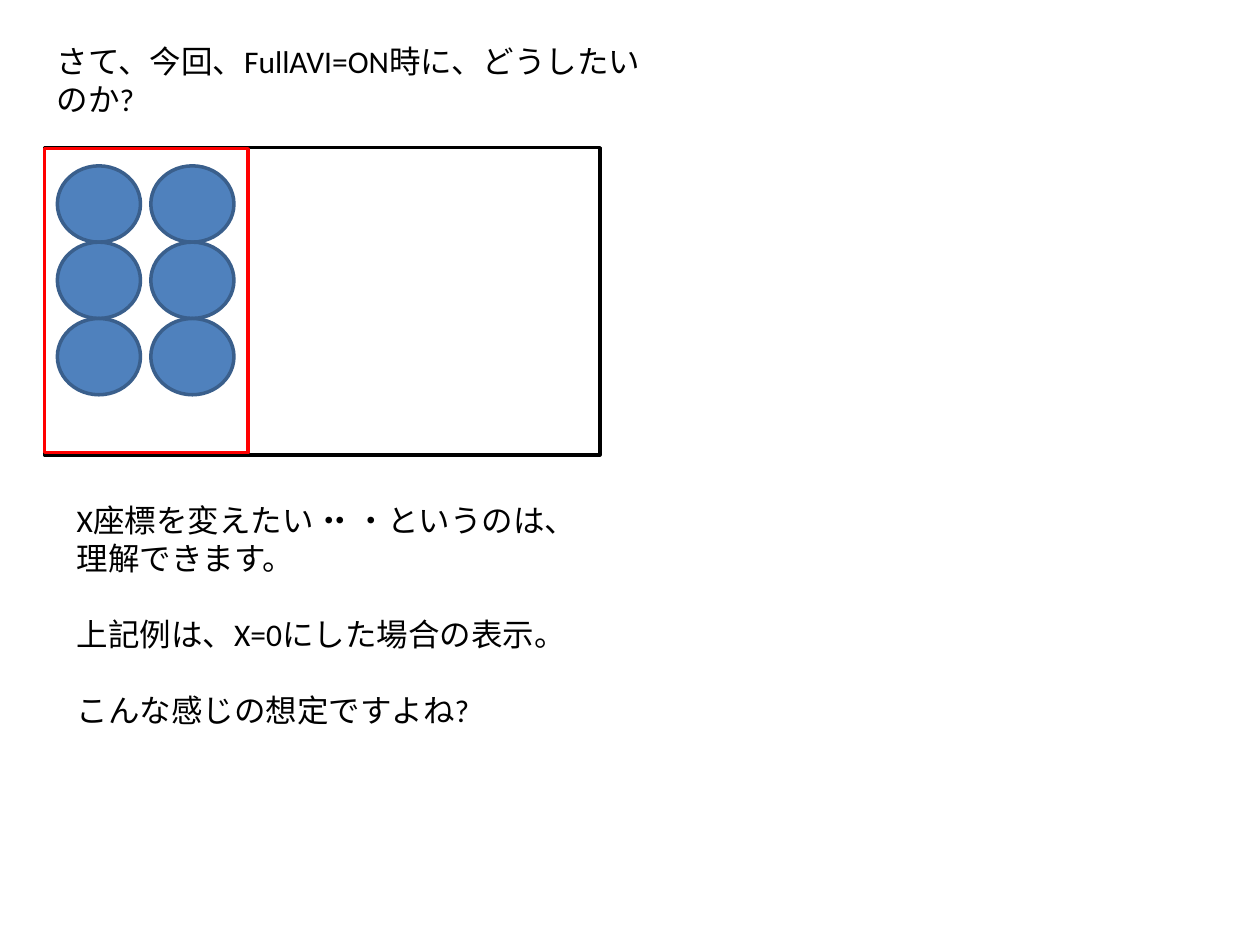
"""Build a slide about the display layout wanted when FullAVI is on."""
import dataclasses

import pptx
import pptx.dml.color
import pptx.enum.shapes
import pptx.enum.text
import pptx.util

Pt = pptx.util.Pt
MSO_SHAPE = pptx.enum.shapes.MSO_SHAPE
COLORS = {"text": "000000", "frame": "000000", "window": "FF0000",
          "disc": "4F81BD", "disc_edge": "3A5F8C"}


@dataclasses.dataclass(frozen=True)
class Box:
    left: float
    top: float
    width: float
    height: float


@dataclasses.dataclass(frozen=True)
class Span:
    text: str
    spacing: float = 0


@dataclasses.dataclass(frozen=True)
class Line:
    spans: tuple[Span, ...]
    gap: float = 0


def rgb(name: str) -> pptx.dml.color.RGBColor:
    return pptx.dml.color.RGBColor.from_string(COLORS[name])


def place(sp, box: Box) -> None:
    sp.left, sp.top = Pt(box.left), Pt(box.top)
    sp.width, sp.height = Pt(box.width), Pt(box.height)


def write(tf, lines: list[Line], *, size: float = 18, font: str = "Calibri",
          color: str = "text") -> None:
    tf.word_wrap = True
    tf.auto_size = pptx.enum.text.MSO_AUTO_SIZE.NONE
    tf.vertical_anchor = pptx.enum.text.MSO_ANCHOR.TOP
    for i, line in enumerate(lines):
        p = tf.paragraphs[0] if i == 0 else tf.add_paragraph()
        p.alignment = pptx.enum.text.PP_ALIGN.LEFT
        p.space_before = Pt(line.gap)
        for span in line.spans:
            r = p.add_run()
            r.text = span.text
            r.font.size, r.font.name = Pt(size), font
            r.font.color.rgb = rgb(color)
            if span.spacing:
                r.font._element.set("spc", str(round(span.spacing * 100)))


def draw(shapes, kind: MSO_SHAPE, box: Box, line: str,
         fill: str | None = None) -> None:
    sp = shapes.add_shape(kind, 0, 0, 0, 0)
    place(sp, box)
    sp.shadow.inherit = False
    sp.line.color.rgb = rgb(line)
    sp.line.width = Pt(2)
    if fill:
        sp.fill.solid()
        sp.fill.fore_color.rgb = rgb(fill)
    else:
        sp.fill.background()


def main() -> None:
    prs = pptx.Presentation()
    prs.slide_width, prs.slide_height = Pt(720), Pt(540)
    s = prs.slides.add_slide(prs.slide_layouts[5])

    title = s.shapes.title
    place(title, Box(25.2, 20.6, 358, 29))
    write(title.text_frame,
          [Line((Span("さて、今回、FullAVI=ON時に、どうしたいのか?"),))])

    draw(s.shapes, MSO_SHAPE.RECTANGLE, Box(25.5, 84.4, 317.3, 175.6), "frame")
    group = s.shapes.add_group_shape()
    draw(group.shapes, MSO_SHAPE.RECTANGLE, Box(25.5, 85, 116.2, 173.6), "window")
    for row in range(3):
        for col in range(2):
            box = Box(32.8 + 53.4 * col, 94.8 + 43.6 * row, 47.5, 43.6)
            draw(group.shapes, MSO_SHAPE.OVAL, box, "disc_edge", "disc")

    note = s.shapes.add_textbox(0, 0, 0, 0)
    place(note, Box(36.7, 283, 294.5, 138))
    write(note.text_frame, [
        Line((Span("X座標を変えた"), Span("い", -6), Span("・・", -12),
              Span("・", -6), Span("というのは、"))),
        Line((Span("理解できます。"),)),
        Line((Span("上記例は、X=0にした場合の表示。"),), gap=21.7),
        Line((Span("こんな感じの想定ですよね?"),), gap=21.7),
    ])

    prs.save("out.pptx")


if __name__ == "__main__":
    main()
